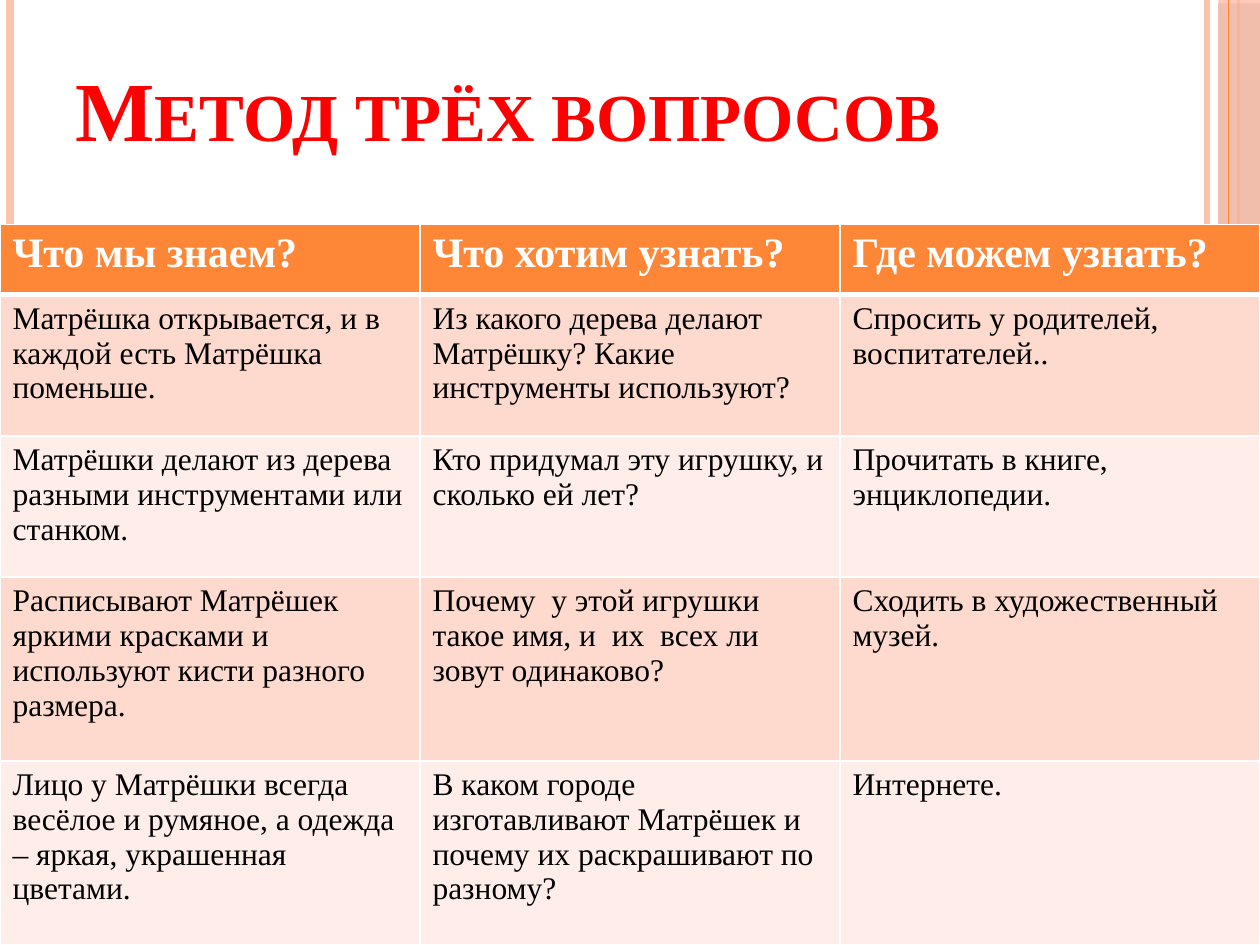
from lxml.etree import SubElement
from pptx import Presentation
from pptx.dml.color import RGBColor
from pptx.enum.shapes import MSO_CONNECTOR as Connector, MSO_SHAPE as Shape
from pptx.enum.text import MSO_ANCHOR as Anchor, PP_ALIGN as Align
from pptx.oxml import parse_xml
from pptx.oxml.ns import nsdecls, qn
from pptx.util import Inches, Pt

WIDTH, HEIGHT = 10, 7.5
FONT = "Times New Roman"
COLORS = {
    "title": "FF0000", "accent": "FE8637", "pale": "FEC2AE",
    "odd_row": "FED9CD", "even_row": "FEEDE8", "white": "FFFFFF", "text": "000000",
}

TITLE = "Метод трёх вопросов"
ROWS = [
    ("Что мы знаем?", "Что хотим узнать?", "Где можем узнать?"),
    ("Матрёшка открывается, и в каждой есть Матрёшка поменьше.",
     "Из какого дерева делают Матрёшку? Какие инструменты используют?",
     "Спросить у родителей, воспитателей.."),
    ("Матрёшки делают из дерева разными инструментами или станком.",
     "Кто придумал эту игрушку, и сколько ей лет?",
     "Прочитать в книге, энциклопедии."),
    ("Расписывают Матрёшек яркими красками и используют кисти разного размера.",
     "Почему  у этой игрушки такое имя, и  их  всех ли зовут одинаково?",
     "Сходить в художественный музей."),
    ("Лицо у Матрёшки всегда весёлое и румяное, а одежда – яркая, украшенная цветами.",
     "В каком городе изготавливают Матрёшек и почему их раскрашивают по разному?",
     "Интернете."),
]
ROW_HEIGHTS = [0.56, 1.12, 1.12, 1.46, 1.46]
THIN, THICK = 0.96, 3

# x position, line width, colour
STRIPES_BEHIND = [(9.58, 3, "pale"), (0.08, 4.5, "pale"), (9.83, 1.5, "accent")]
STRIPES_FRONT = [(9.75, 0.75, "accent")]
BAND_WIDTH = 0.33


def rgb(name):
    return RGBColor.from_string(COLORS[name])


def add_stripes(page, stripes):
    for x, width, color in stripes:
        stripe = page.shapes.add_connector(
            Connector.STRAIGHT, Inches(x), 0, Inches(x), Inches(HEIGHT))
        stripe.line.color.rgb = rgb(color)
        stripe.line.width = Pt(width)
        SubElement(stripe._element.spPr, qn("a:effectLst"))


def add_band(page):
    """Translucent band on the right edge with a short downward shadow."""
    band = page.shapes.add_shape(Shape.RECTANGLE, Inches(WIDTH - BAND_WIDTH), 0,
                                 Inches(BAND_WIDTH), Inches(HEIGHT))
    band.fill.solid()
    band.fill.fore_color.rgb = rgb("pale")
    band.line.fill.background()
    properties = band._element.spPr
    fill_color = properties.find(qn("a:solidFill"))[0]
    SubElement(fill_color, qn("a:alpha"), val="87000")
    properties.append(parse_xml(
        f'<a:effectLst {nsdecls("a")}><a:outerShdw blurRad="0" dist="{Pt(2)}" '
        'dir="5400000" rotWithShape="0"><a:srgbClr val="000000">'
        '<a:alpha val="40000"/></a:srgbClr></a:outerShdw></a:effectLst>'))


def format_title(page):
    title = page.shapes.title
    title.left, title.top = Inches(0.5), 0
    title.width, title.height = Inches(8.17), Inches(1.31)
    frame = title.text_frame
    frame.text = TITLE
    frame.word_wrap = True
    frame.vertical_anchor = Anchor.BOTTOM
    frame.paragraphs[0].alignment = Align.LEFT
    span = frame.paragraphs[0].runs[0]
    style_text(span.font, 48, "title", True)
    span._r.get_or_add_rPr().set("cap", "small")


def style_text(font, size, color, bold):
    font.name, font.size, font.bold = FONT, Pt(size), bold
    font.color.rgb = rgb(color)


def set_borders(cell, top, bottom):
    properties = cell._tc.get_or_add_tcPr()
    for side, width in (("L", THIN), ("R", THIN), ("T", top), ("B", bottom)):
        properties.append(parse_xml(
            f'<a:ln{side} {nsdecls("a")} w="{Pt(width)}"><a:solidFill>'
            f'<a:srgbClr val="{COLORS["white"]}"/></a:solidFill></a:ln{side}>'))


def add_question_table(page):
    table_height = sum(ROW_HEIGHTS)
    table = page.shapes.add_table(
        len(ROWS), len(ROWS[0]), 0, Inches(HEIGHT - table_height),
        Inches(WIDTH), Inches(table_height)).table
    for row, height in zip(table.rows, ROW_HEIGHTS):
        row.height = Inches(height)
    for i, texts in enumerate(ROWS):
        header = i == 0
        fill = "accent" if header else "odd_row" if i % 2 else "even_row"
        for j, text in enumerate(texts):
            cell = table.cell(i, j)
            set_borders(cell, THICK if i == 1 else THIN, THICK if header else THIN)
            cell.fill.solid()
            cell.fill.fore_color.rgb = rgb(fill)
            cell.text_frame.text = text
            font = cell.text_frame.paragraphs[0].runs[0].font
            style_text(font, 24 if header else 18, "white" if header else "text", header)


def main():
    deck = Presentation()
    deck.slide_width, deck.slide_height = Inches(WIDTH), Inches(HEIGHT)
    page = deck.slides.add_slide(deck.slide_layouts[5])
    add_stripes(page, STRIPES_BEHIND)
    add_band(page)
    add_stripes(page, STRIPES_FRONT)
    format_title(page)
    add_question_table(page)
    deck.save("out.pptx")


if __name__ == "__main__":
    main()
